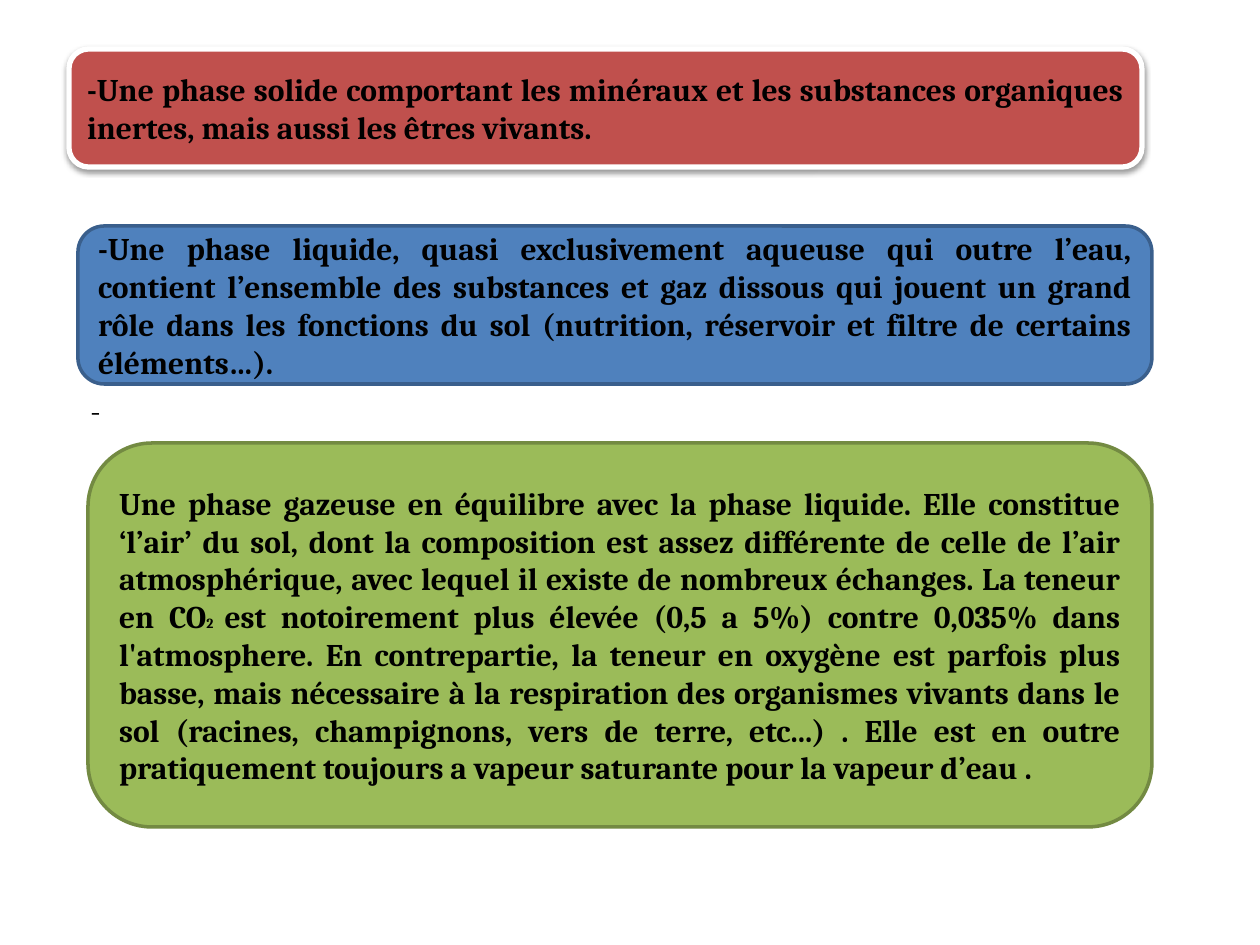
"""Build a slide describing the solid, liquid and gaseous phases of soil."""
import lxml.etree
import pptx
import pptx.dml.color
import pptx.enum.shapes
import pptx.enum.text
import pptx.oxml.ns
import pptx.util

PX = 914400 // 126
BLACK = pptx.dml.color.RGBColor(0x00, 0x00, 0x00)
WHITE = pptx.dml.color.RGBColor(0xFF, 0xFF, 0xFF)
RED = pptx.dml.color.RGBColor(0xC0, 0x50, 0x4D)
BLUE = pptx.dml.color.RGBColor(0x4F, 0x81, 0xBD)
DARK_BLUE = pptx.dml.color.RGBColor(0x3A, 0x5F, 0x8C)
GREEN = pptx.dml.color.RGBColor(0x9B, 0xBB, 0x59)
DARK_GREEN = pptx.dml.color.RGBColor(0x73, 0x8A, 0x42)

SOLID = ["-Une phase solide comportant les minéraux et les substances organiques "
         "inertes, mais aussi les êtres vivants."]
LIQUID = ["-Une phase liquide, quasi exclusivement aqueuse qui outre l’eau, contient "
          "l’ensemble des substances et gaz dissous qui jouent un grand rôle dans les "
          "fonctions du sol (nutrition, réservoir et filtre de certains éléments…)."]
GAS = ["Une phase gazeuse en équilibre avec la phase liquide. Elle constitue ‘l’air’ du "
       "sol, dont la composition est assez différente de celle de l’air atmosphérique, "
       "avec lequel il existe de nombreux échanges. La teneur en CO",
       "2 ",
       "est notoirement plus élevée (0,5 a 5%) contre 0,035% dans l'atmosphere. En "
       "contrepartie, la teneur en oxygène est parfois plus basse, mais nécessaire à la "
       "respiration des organismes vivants dans le sol (racines, champignons, vers de "
       "terre, etc...) . Elle est en outre pratiquement toujours a vapeur saturante pour "
       "la vapeur d’eau ."]


def write_justified(frame, pieces, bold):
    frame.word_wrap = True
    paragraph = frame.paragraphs[0]
    paragraph.alignment = pptx.enum.text.PP_ALIGN.JUSTIFY
    for piece in pieces:
        run = paragraph.add_run()
        run.text = piece
        run.font.name = "Cambria"
        run.font.size = pptx.util.Pt(8 if piece == "2 " else 18)
        run.font.bold = bold
        run.font.color.rgb = BLACK


presentation = pptx.Presentation()
presentation.slide_width = pptx.util.Inches(10)
presentation.slide_height = pptx.util.Inches(7.5)
slide = presentation.slides.add_slide(presentation.slide_layouts[6])

dash = slide.shapes.add_textbox(78 * PX, 78 * PX, 1092 * PX, 357 * PX)
dash.text_frame.vertical_anchor = pptx.enum.text.MSO_ANCHOR.BOTTOM
write_justified(dash.text_frame, ["-"], False)

phases = [
    (SOLID, (69, 49, 1073, 118), RED, WHITE, 3),
    (LIQUID, (78, 226, 1074, 158), BLUE, DARK_BLUE, 2),
    (GAS, (88, 443, 1064, 384), GREEN, DARK_GREEN, 2),
]
panels = []
for pieces, box, fill, border, border_width in phases:
    panel = slide.shapes.add_shape(
        pptx.enum.shapes.MSO_SHAPE.ROUNDED_RECTANGLE, *(length * PX for length in box))
    panel.shadow.inherit = False
    panel.fill.solid()
    panel.fill.fore_color.rgb = fill
    panel.line.color.rgb = border
    panel.line.width = pptx.util.Pt(border_width)
    panel.text_frame.vertical_anchor = pptx.enum.text.MSO_ANCHOR.MIDDLE
    write_justified(panel.text_frame, pieces, True)
    panels.append(panel)

qn = pptx.oxml.ns.qn
effects = panels[0].element.spPr.find(qn("a:effectLst"))
shadow = lxml.etree.SubElement(effects, qn("a:outerShdw"), blurRad="40000",
                               dist="20000", dir="5400000", rotWithShape="0")
shade = lxml.etree.SubElement(shadow, qn("a:srgbClr"), val=str(BLACK))
lxml.etree.SubElement(shade, qn("a:alpha"), val="38000")

presentation.save("out.pptx")
